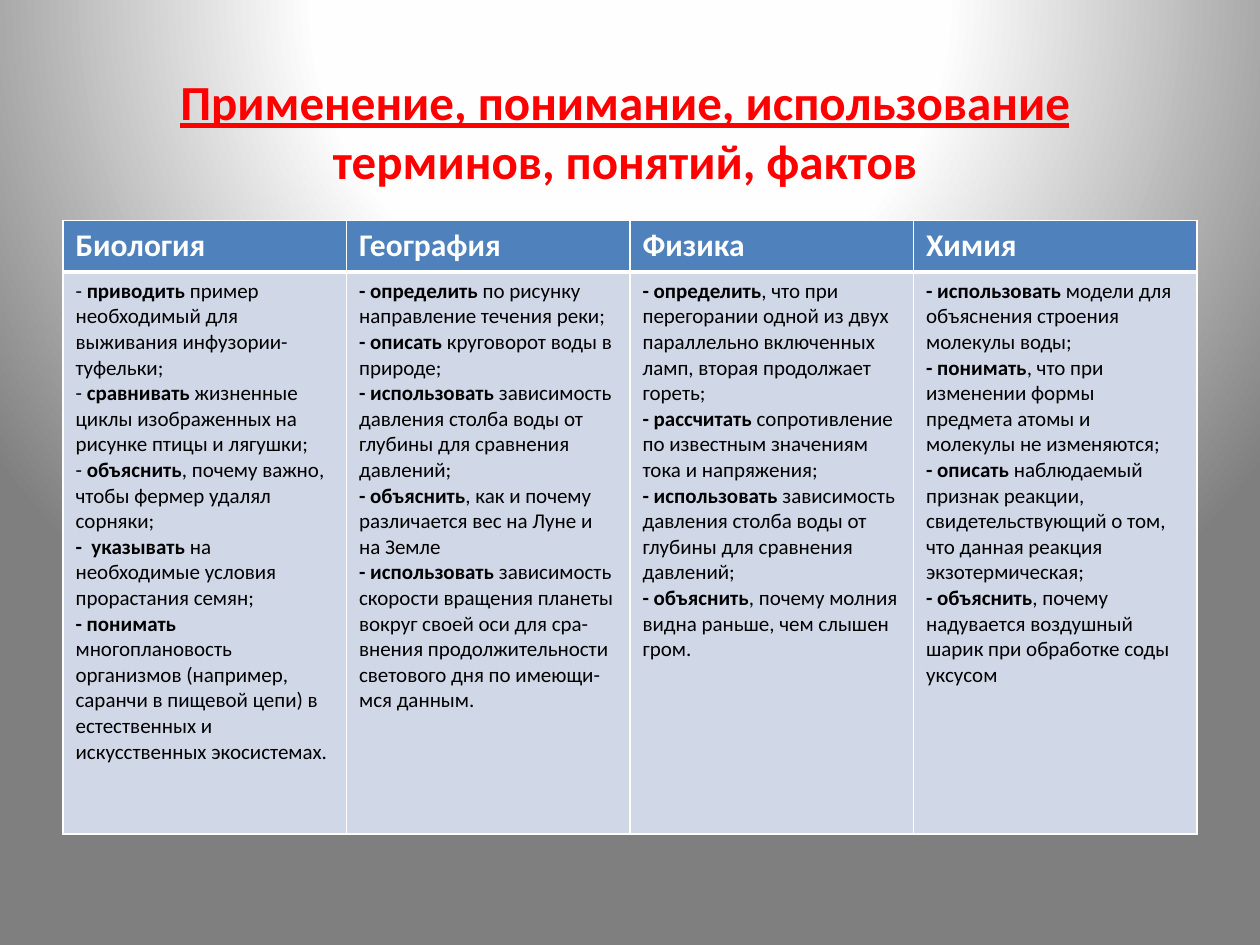
from lxml.etree import SubElement
from pptx import Presentation
from pptx.dml.color import RGBColor
from pptx.enum.text import MSO_AUTO_SIZE, PP_ALIGN
from pptx.oxml import parse_xml
from pptx.oxml.ns import nsdecls, qn
from pptx.util import Inches, Pt

FONT = "Calibri"
WHITE, BLACK, RED = "FFFFFF", "000000", "FF0000"
HEADER_FILL, BODY_FILL = "4F81BD", "D0D8E8"
STOPS = [(0, "FFFFFF"), (40, "FEFEFE"), (100, "7F7F7F")]

TITLE = [("Применение, понимание, использование ", True),
         ("терминов, понятий, фактов", False)]

# Subject -> (bold lead, rest of the sentence)
SUBJECTS = {
    "Биология": [
        ("приводить ", "пример необходимый для выживания инфузории-туфельки;"),
        ("сравнивать ", "жизненные циклы изображенных на рисунке птицы и лягушки;"),
        ("объяснить", ", почему важно, чтобы фермер удалял сорняки;"),
        ("-  указывать ", "на необходимые условия прорастания семян;"),
        ("- понимать ", "многоплановость организмов (например, саранчи в пищевой цепи) "
                        "в естественных и искусственных экосистемах."),
    ],
    "География": [
        ("- определить ", "по рисунку направление течения реки;"),
        ("- описать ", "круговорот воды в природе;"),
        ("- использовать ", "зависимость давления столба воды от глубины "
                            "для сравнения давлений;"),
        ("- объяснить", ", как и почему различается вес на Луне и на Земле"),
        ("- использовать ", "зависимость скорости вращения планеты вокруг своей оси "
                            "для сра-внения продолжительности светового дня "
                            "по имеющи-мся данным."),
    ],
    "Физика": [
        ("- определить", ", что при перегорании одной из двух параллельно включенных "
                         "ламп, вторая продолжает гореть;"),
        ("- рассчитать ", "сопротивление по известным значениям тока и напряжения;"),
        ("- использовать ", "зависимость давления столба воды от глубины "
                            "для сравнения давлений;"),
        ("- объяснить", ", почему молния видна раньше, чем слышен гром."),
    ],
    "Химия": [
        ("- использовать ", "модели для объяснения строения молекулы воды;"),
        ("- понимать", ", что при изменении формы предмета атомы и молекулы "
                       "не изменяются;"),
        ("- описать ", "наблюдаемый признак реакции, свидетельствующий о том, "
                       "что данная реакция экзотермическая;"),
        ("- объяснить", ", почему надувается воздушный шарик при обработке соды уксусом"),
    ],
}

HEADER_FORMAT = {"name": FONT, "size": Pt(18), "bold": True}
BODY_FORMAT = {"name": FONT, "size": Pt(12), "bold": False}
TITLE_FORMAT = {"name": FONT, "size": Pt(28), "bold": True}


def rgb(value):
    return RGBColor.from_string(value)


def add_run(p, text, color, fmt):
    r = p.add_run()
    r.text = text
    for name, value in fmt.items():
        setattr(r.font, name, value)
    r.font.color.rgb = rgb(color)


def style_cell(cell, fill, widths):
    """Fill the cell and draw its left, right, top and bottom borders."""
    cell.fill.solid()
    cell.fill.fore_color.rgb = rgb(fill)
    tc_pr = cell._tc.get_or_add_tcPr()
    for i, (side, width) in enumerate(zip("LRTB", widths)):
        ln = SubElement(tc_pr, qn(f"a:ln{side}"), w=str(Pt(width)))
        SubElement(SubElement(ln, qn("a:solidFill")), qn("a:srgbClr"), val=WHITE)
        tc_pr.insert(i, ln)


def set_background(s):
    s.background.fill.solid()
    bg_pr = s.element.find(".//" + qn("p:bgPr"))
    stops = "".join(f'<a:gs pos="{pos * 1000}"><a:srgbClr val="{color}"/></a:gs>'
                    for pos, color in STOPS)
    bg_pr.replace(bg_pr[0], parse_xml(
        f'<a:gradFill {nsdecls("a")} rotWithShape="1"><a:gsLst>{stops}</a:gsLst>'
        '<a:path path="circle"><a:fillToRect l="50000" t="-80000" r="50000" b="180000"/>'
        '</a:path></a:gradFill>'))


def add_subject_table(s):
    heights = [0.41, 4.46]
    table = s.shapes.add_table(2, len(SUBJECTS), Inches(0.5), Inches(1.75),
                               Inches(9), Inches(sum(heights))).table
    for row, height in zip(table.rows, heights):
        row.height = Inches(height)
    for col, (subject, tasks) in enumerate(SUBJECTS.items()):
        header, body = table.cell(0, col), table.cell(1, col)
        style_cell(header, HEADER_FILL, (1, 1, 1, 3))
        style_cell(body, BODY_FILL, (1, 1, 3, 1))
        add_run(header.text_frame.paragraphs[0], subject, WHITE, HEADER_FORMAT)
        tf = body.text_frame
        for i, (lead, rest) in enumerate(tasks):
            p = tf.add_paragraph() if i else tf.paragraphs[0]
            if not lead.startswith("-"):
                add_run(p, "- ", BLACK, BODY_FORMAT)
            add_run(p, lead, BLACK, BODY_FORMAT | {"bold": True})
            add_run(p, rest, BLACK, BODY_FORMAT)


def add_title(s):
    box = s.shapes.add_textbox(Inches(0.51), Inches(0.52), Inches(8.9), Inches(1.04))
    tf = box.text_frame
    tf.word_wrap = True
    tf.auto_size = MSO_AUTO_SIZE.SHAPE_TO_FIT_TEXT
    p = tf.paragraphs[0]
    p.alignment = PP_ALIGN.CENTER
    for text, underline in TITLE:
        add_run(p, text, RED, TITLE_FORMAT | {"underline": underline})


def main():
    prs = Presentation()
    prs.slide_width, prs.slide_height = Inches(10), Inches(7.5)
    s = prs.slides.add_slide(prs.slide_layouts[6])
    set_background(s)
    add_subject_table(s)
    add_title(s)
    prs.save("out.pptx")


if __name__ == "__main__":
    main()
